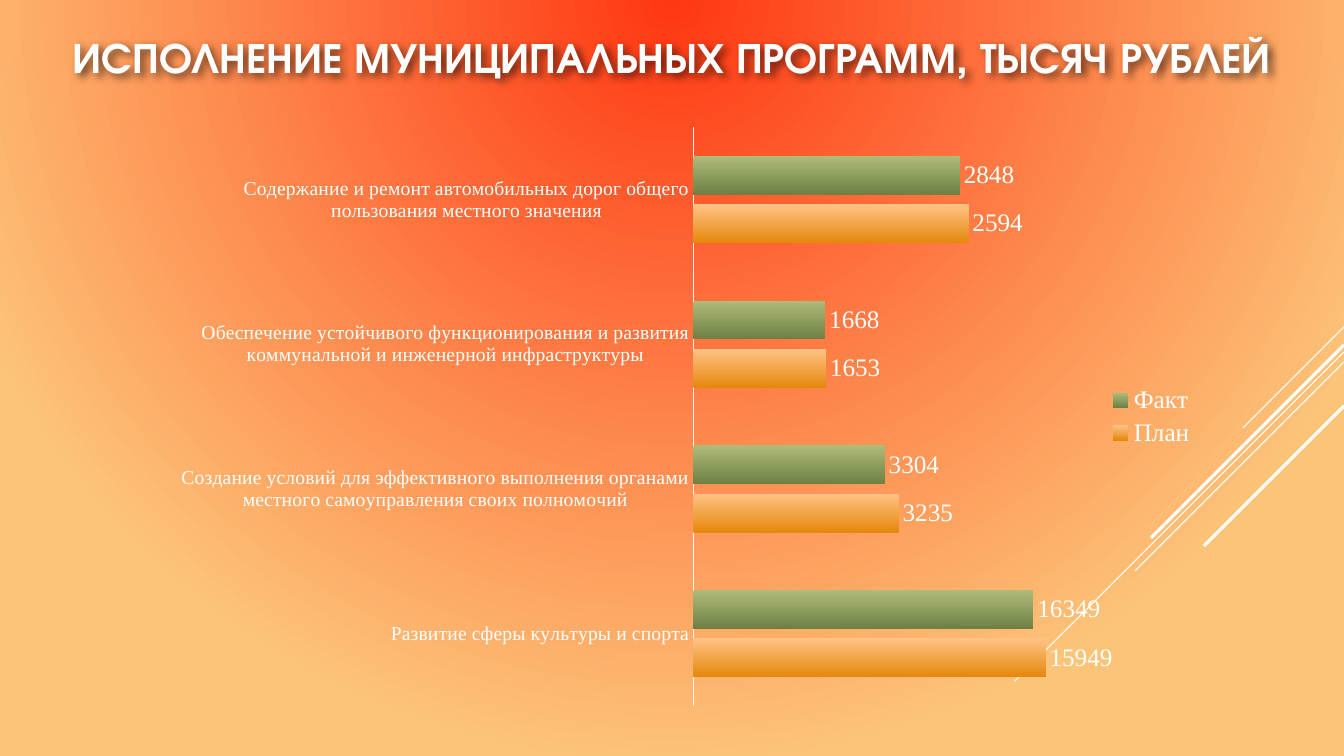
from lxml import etree
from pptx import Presentation
from pptx.chart.data import CategoryChartData
from pptx.dml.color import RGBColor
from pptx.enum import chart as ch, shapes, text
from pptx.oxml import parse_xml
from pptx.oxml.ns import nsdecls, qn
from pptx.util import Pt

PX = 914400 / 100.8
WIDTH, HEIGHT = 1344, 756
WHITE = RGBColor(0xFF, 0xFF, 0xFF)
RED = RGBColor(0xFF, 0x37, 0x12)
SAND = RGBColor(0xFC, 0xC4, 0x79)
LIGHT_ORANGE = RGBColor(0xFF, 0xC3, 0x86)
ORANGE = RGBColor(0xE5, 0x88, 0x0C)
LIGHT_GREEN = RGBColor(0xAE, 0xBC, 0x79)
GREEN = RGBColor(0x6F, 0x80, 0x45)
HEAD_FONT, BODY_FONT = "TeX Gyre Adventor", "Times New Roman"


def px(*lengths):
    return [round(n * PX) for n in lengths]


def style(font, size, name=BODY_FONT):
    font.size = Pt(size)
    font.name = name
    font.color.rgb = WHITE


prs = Presentation()
prs.slide_width, prs.slide_height = px(WIDTH, HEIGHT)
s = prs.slides.add_slide(prs.slide_layouts[5])

# Background: circular gradient spreading from the top
fill = s.background.fill
fill.gradient()
for stop, color in zip(fill.gradient_stops, (RED, SAND)):
    stop.color.rgb = color
grad = s.element.find(".//" + qn("a:gradFill"))
grad.replace(grad.find(qn("a:lin")), parse_xml(
    f'<a:path {nsdecls("a")} path="circle"><a:fillToRect b="100000"/></a:path>'))

# Diagonal lines from the right edge: top, run, width
for top, run, weight in [(327, 101, 0.75), (352, 329, 0.75), (362, 209, 0.75),
                         (345, 193, 2.25), (406, 140, 2.25)]:
    line = s.shapes.add_connector(shapes.MSO_CONNECTOR.STRAIGHT,
                                  *px(WIDTH, top, WIDTH - run, top + run))
    line.line.color.rgb = WHITE
    line.line.width = Pt(weight)
    etree.SubElement(line._element.spPr, qn("a:effectLst"))

# Title
title = s.shapes.title
title.left, title.top, title.width, title.height = px(0, 10, WIDTH, 92)
tf = title.text_frame
tf.vertical_anchor = text.MSO_ANCHOR.MIDDLE
p = tf.paragraphs[0]
p.alignment = text.PP_ALIGN.CENTER
r = p.add_run()
r.text = "ИСПОЛНЕНИЕ МУНИЦИПАЛЬНЫХ ПРОГРАММ, ТЫСЯЧ РУБЛЕЙ"
style(r.font, 30.6, HEAD_FONT)
r.font.bold = True
title._element.spPr.append(parse_xml(
    f'<a:effectLst {nsdecls("a")}><a:outerShdw blurRad="76200" dist="38100" dir="2700000">'
    '<a:srgbClr val="000000"><a:alpha val="60000"/></a:srgbClr></a:outerShdw></a:effectLst>'))

# Chart: name, bar lengths, labels, gradient
series = [
    ("План", (7281, 4244, 2741, 5687), (15949, 3235, 1653, 2594), (LIGHT_ORANGE, ORANGE)),
    ("Факт", (7029, 3956, 2726, 5508), (16349, 3304, 1668, 2848), (LIGHT_GREEN, GREEN)),
]
data = CategoryChartData()
data.categories = [
    "Развитие сферы культуры и спорта",
    "Создание условий для эффективного выполнения органами местного самоуправления своих полномочий",
    "Обеспечение устойчивого функционирования и развития коммунальной и инженерной инфраструктуры",
    "Содержание и ремонт автомобильных дорог общего пользования местного значения",
]
for name, lengths, labels, colors in series:
    data.add_series(name, lengths)
chart = s.shapes.add_chart(ch.XL_CHART_TYPE.BAR_CLUSTERED, *px(160, 115, 1046, 603), data).chart
chart.has_title = False
style(chart.font, 10, HEAD_FONT)
chart.has_legend = True
chart.legend.position = ch.XL_LEGEND_POSITION.RIGHT
chart.legend.include_in_layout = False
style(chart.legend.font, 18)

axis = chart.category_axis
axis.major_tick_mark = ch.XL_TICK_MARK.NONE
axis.format.line.color.rgb = WHITE
axis.format.line.width = Pt(1)
style(axis.tick_labels.font, 14)
values = chart.value_axis
values.visible = False
values.has_major_gridlines = False
values.minimum_scale, values.maximum_scale = 0, 8000

plot = chart.plots[0]
plot.gap_width, plot.overlap = 150, -25
plot.vary_by_categories = False
for bars, (name, lengths, labels, colors) in zip(plot.series, series):
    fill = bars.format.fill
    fill.gradient()
    fill.gradient_angle = 270
    for stop, color in zip(fill.gradient_stops, colors):
        stop.color.rgb = color
    bars.data_labels.show_value = True
    style(bars.data_labels.font, 18)
    for i, value in enumerate(labels):
        label = bars.points[i].data_label
        r = label.text_frame.paragraphs[0].add_run()
        r.text = str(value)
        style(r.font, 18)
        label.position = ch.XL_LABEL_POSITION.OUTSIDE_END

# Plot area as shares of the chart frame
area = chart._chartSpace.find(".//" + qn("c:plotArea"))
for old in area.findall(qn("c:layout")):
    area.remove(old)
area.insert(0, parse_xml(
    f'<c:layout {nsdecls("c")}><c:manualLayout><c:layoutTarget val="inner"/>'
    '<c:xMode val="edge"/><c:yMode val="edge"/><c:x val="0.51"/><c:y val="0.02"/>'
    '<c:w val="0.37"/><c:h val="0.96"/></c:manualLayout></c:layout>'))

prs.save("out.pptx")
